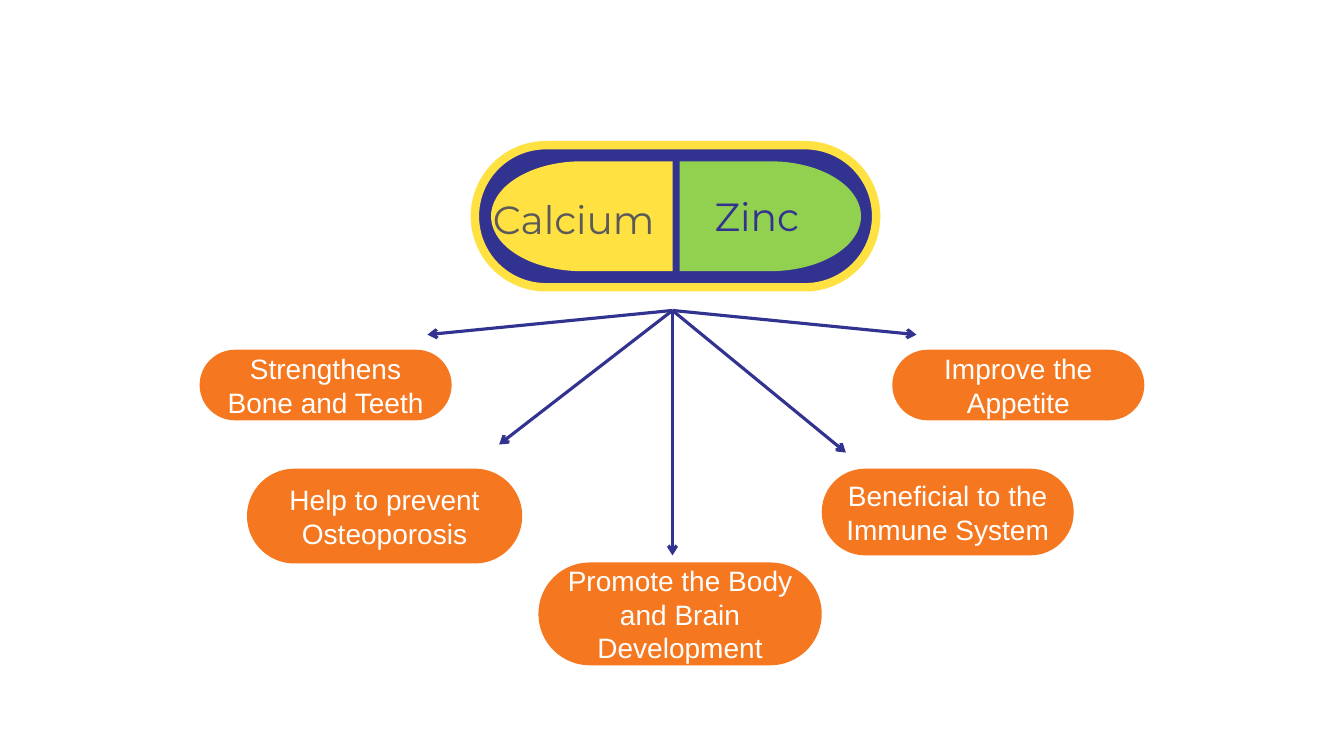
from lxml import etree
from pptx import Presentation
from pptx.dml.color import RGBColor
from pptx.enum.shapes import MSO_CONNECTOR, MSO_SHAPE
from pptx.enum.text import MSO_ANCHOR, PP_ALIGN
from pptx.oxml.ns import qn
from pptx.util import Inches, Pt

CAPSULE, HALF = MSO_SHAPE.ROUNDED_RECTANGLE, MSO_SHAPE.FLOWCHART_DELAY
STRAIGHT = MSO_CONNECTOR.STRAIGHT
MIDDLE, TOP = MSO_ANCHOR.MIDDLE, MSO_ANCHOR.TOP
CENTER, LEFT = PP_ALIGN.CENTER, PP_ALIGN.LEFT

COLORS = {
    "navy": "323291",
    "yellow": "FFE241",
    "green": "92D050",
    "orange": "F57820",
    "gray": "5A5A5A",
    "white": "FFFFFF",
}
COLORS = {name: RGBColor.from_string(value) for name, value in COLORS.items()}

deck = Presentation()
deck.slide_width, deck.slide_height = Inches(13.33), Inches(7.5)
page = deck.slides.add_slide(deck.slide_layouts[6])


def add_block(kind, left, top, width, height, fill):
    block = page.shapes.add_shape(
        kind, Inches(left), Inches(top), Inches(width), Inches(height))
    block.shadow.inherit = False
    block.fill.solid()
    block.fill.fore_color.rgb = COLORS[fill]
    block.line.fill.background()
    if kind == CAPSULE:
        block.adjustments[0] = 0.5
    return block


def write(box, text, *, size=20, font="Arial", color="white",
          align=CENTER, anchor=MIDDLE):
    frame = box.text_frame
    frame.word_wrap = True
    frame.vertical_anchor = anchor
    para = frame.paragraphs[0]
    para.alignment = align
    span = para.add_run()
    span.text = text
    span.font.size = Pt(size)
    span.font.name = font
    span.font.color.rgb = COLORS[color]


# Two-part capsule
shell = add_block(CAPSULE, 4.71, 1.44, 3.98, 1.41, "navy")
shell.line.color.rgb = COLORS["yellow"]
shell.line.width = Pt(6)

zinc = add_block(HALF, 6.74, 1.6, 1.8, 1.09, "green")
write(zinc, "Zinc", size=28, font="Montserrat", color="navy")

calcium = add_block(HALF, 4.87, 1.6, 1.8, 1.09, "yellow")
calcium.rotation = 180
calcium_label = page.shapes.add_textbox(
    Inches(4.79), Inches(1.89), Inches(2.03), Inches(0.57))
write(calcium_label, "Calcium", size=28, font="Montserrat", color="gray",
      align=LEFT, anchor=TOP)

# Benefits: text, left, top, width, height, arrow tip
benefits = [
    ("Strengthens Bone and Teeth", 1.98, 3.47, 2.5, 0.7, (4.24, 3.32)),
    ("Help to prevent Osteoporosis", 2.45, 4.65, 2.73, 0.94, (4.95, 4.41)),
    ("Promote the Body and Brain Development", 5.34, 5.58, 2.81, 1.02, (6.67, 5.51)),
    ("Beneficial to the Immune System", 8.15, 4.65, 2.5, 0.86, (8.39, 4.49)),
    ("Improve the Appetite", 8.85, 3.47, 2.5, 0.7, (9.09, 3.32)),
]
for text, left, top, width, height, (tip_x, tip_y) in benefits:
    write(add_block(CAPSULE, left, top, width, height, "orange"), text)
    arrow = page.shapes.add_connector(
        STRAIGHT, Inches(6.67), Inches(3.08), Inches(tip_x), Inches(tip_y))
    arrow.line.color.rgb = COLORS["navy"]
    arrow.line.width = Pt(2.25)
    etree.SubElement(arrow.line._get_or_add_ln(), qn("a:tailEnd"), type="arrow")
    etree.SubElement(arrow._element.spPr, qn("a:effectLst"))

deck.save("out.pptx")
